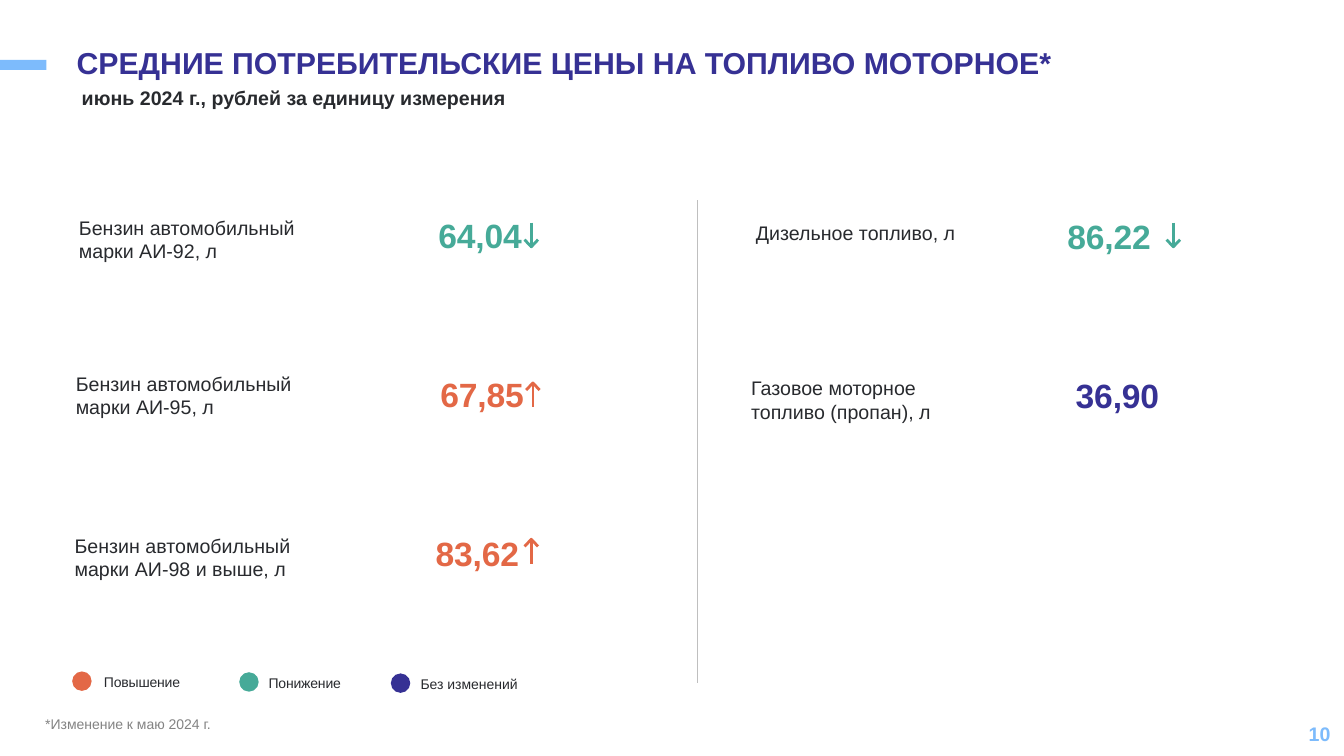
import pptx
import pptx.dml.color
import pptx.enum.shapes
import pptx.enum.text
import pptx.oxml.ns
import pptx.util
from lxml import etree

Cm = pptx.util.Cm
Pt = pptx.util.Pt
RGBColor = pptx.dml.color.RGBColor
SHAPE = pptx.enum.shapes.MSO_SHAPE
ALIGN = pptx.enum.text.PP_ALIGN
ANCHOR = pptx.enum.text.MSO_ANCHOR

UP = RGBColor(0xE3, 0x68, 0x46)
DOWN = RGBColor(0x46, 0xAA, 0x98)
SAME = RGBColor(0x36, 0x31, 0x94)
SKY = RGBColor(0x7D, 0xBB, 0xFC)
INK = RGBColor(0x28, 0x2A, 0x2E)
GREY = RGBColor(0x83, 0x83, 0x83)
RULE = RGBColor(0xBF, 0xBF, 0xBF)

# Insets in cm: left, top, right, bottom
TIGHT = (0.03, 0.06, 0, 0)
ROOMY = (0.25, 0.13, 0.25, 0.13)

# Label, its box (x, y, width), price, its place, colour, arrow top
FUELS = [
    ("Бензин автомобильный марки АИ-92, л", (1.96, 5.38, 6.25),
     "64,04", (11.02, 5.36), DOWN, (13.39, 5.61)),
    ("Бензин автомобильный марки АИ-95, л", (1.88, 9.3, 6.17),
     "67,85", (11.07, 9.37), UP, (13.43, 9.65)),
    ("Бензин автомобильный марки АИ-98 и выше, л", (1.85, 13.39, 6.02),
     "83,62", (10.95, 13.36), UP, (13.39, 13.59)),
    ("Дизельное топливо, л", (19.02, 5.51, 5.18),
     "86,22", (26.87, 5.38), DOWN, (29.57, 5.61)),
    ("Газовое моторное топливо (пропан), л", (18.9, 9.42, 5.41),
     "36,90", (27.08, 9.4), SAME, None),
]

# Label, colour, dot x, label x, y, letter spacing
LEGEND = [
    ("Повышение", UP, 1.82, 2.59, 16.92, -10),
    ("Понижение", DOWN, 6.03, 6.74, 16.94, -10),
    ("Без изменений", SAME, 9.85, 10.57, 16.97, 0),
]


def add_text(s, text, x, y, w, h, size, color, bold=False, inset=TIGHT,
             spacing=0, anchor=ANCHOR.TOP, **para):
    tf = s.shapes.add_textbox(Cm(x), Cm(y), Cm(w), Cm(h)).text_frame
    frame = {"word_wrap": True, "vertical_anchor": anchor}
    sides = ("margin_left", "margin_top", "margin_right", "margin_bottom")
    frame.update(zip(sides, map(Cm, inset)))
    p = tf.paragraphs[0]
    r = p.add_run()
    r.text = text
    font = {"name": "Arial", "size": Pt(size), "bold": bold}
    for obj, values in ((tf, frame), (p, para), (r.font, font)):
        for key, value in values.items():
            setattr(obj, key, value)
    r.font.color.rgb = color
    if spacing:
        r._r.get_or_add_rPr().set("spc", str(spacing))


def add_shape(s, kind, x, y, w, h, color):
    sp = s.shapes.add_shape(kind, Cm(x), Cm(y), Cm(w), Cm(h))
    sp.shadow.inherit = False
    sp.fill.solid()
    sp.fill.fore_color.rgb = color
    sp.line.fill.background()


def add_line(s, x, y1, y2, color, width):
    cxn = s.shapes.add_connector(
        pptx.enum.shapes.MSO_CONNECTOR.STRAIGHT, Cm(x), Cm(y1), Cm(x), Cm(y2))
    cxn.line.color.rgb = color
    cxn.line.width = Pt(width)
    etree.SubElement(cxn._element.spPr, pptx.oxml.ns.qn("a:effectLst"))


def add_arrow(s, x, y, color):
    length, half, head = 0.61, 0.17, 0.18
    add_line(s, x, y, y + length, color, 2)
    if color == UP:
        tip, back = y, y + head
    else:
        tip, back = y + length, y + length - head
    fb = s.shapes.build_freeform(Cm(x - half), Cm(back))
    fb.add_line_segments([(Cm(x), Cm(tip)), (Cm(x + half), Cm(back))], close=False)
    sp = fb.convert_to_shape()
    sp.shadow.inherit = False
    sp.fill.background()
    sp.line.color.rgb = color
    sp.line.width = Pt(2)


def add_fuel(s, label, box, price, place, color, arrow):
    add_text(s, label, *box, 1.24, 14, INK)
    add_text(s, price, *place, 2.6, 1.08, 24, color, bold=True, spacing=-10)
    if arrow:
        add_arrow(s, *arrow, color)


def add_legend_item(s, label, color, dot_x, text_x, y, spacing):
    add_shape(s, SHAPE.OVAL, dot_x, y, 0.49, 0.49, color)
    add_text(s, label, text_x, y, 2.8, 0.46, 10, INK, spacing=spacing)


def main():
    prs = pptx.Presentation()
    prs.slide_width, prs.slide_height = Cm(33.87), Cm(19.05)
    s = prs.slides.add_slide(prs.slide_layouts[6])

    # Heading
    add_shape(s, SHAPE.RECTANGLE, 0, 1.51, 1.17, 0.25, SKY)
    add_text(s, "СРЕДНИЕ ПОТРЕБИТЕЛЬСКИЕ ЦЕНЫ НА ТОПЛИВО МОТОРНОЕ*",
             1.68, 1.09, 26.44, 1.12, 21.6, SAME, bold=True, inset=ROOMY,
             line_spacing=0.9)
    add_text(s, "июнь 2024 г., рублей за единицу измерения",
             1.81, 2.11, 26.31, 1.12, 14, INK, bold=True, inset=ROOMY,
             line_spacing=0.9)

    # Prices in two columns
    add_line(s, 17.58, 5.05, 17.22, RULE, 1)
    for fuel in FUELS:
        add_fuel(s, *fuel)

    # Legend
    for item in LEGEND:
        add_legend_item(s, *item)

    # Footnote and page number
    add_text(s, "*Изменение к маю 2024 г.", 0.89, 17.91, 28.4, 1.02, 10, GREY,
             inset=ROOMY)
    add_text(s, "10", 25.91, 17.91, 7.62, 1.02, 14, SKY, bold=True,
             inset=(0.25, 0.13, 0, 0), anchor=ANCHOR.MIDDLE,
             alignment=ALIGN.RIGHT)

    prs.save("out.pptx")


if __name__ == "__main__":
    main()
